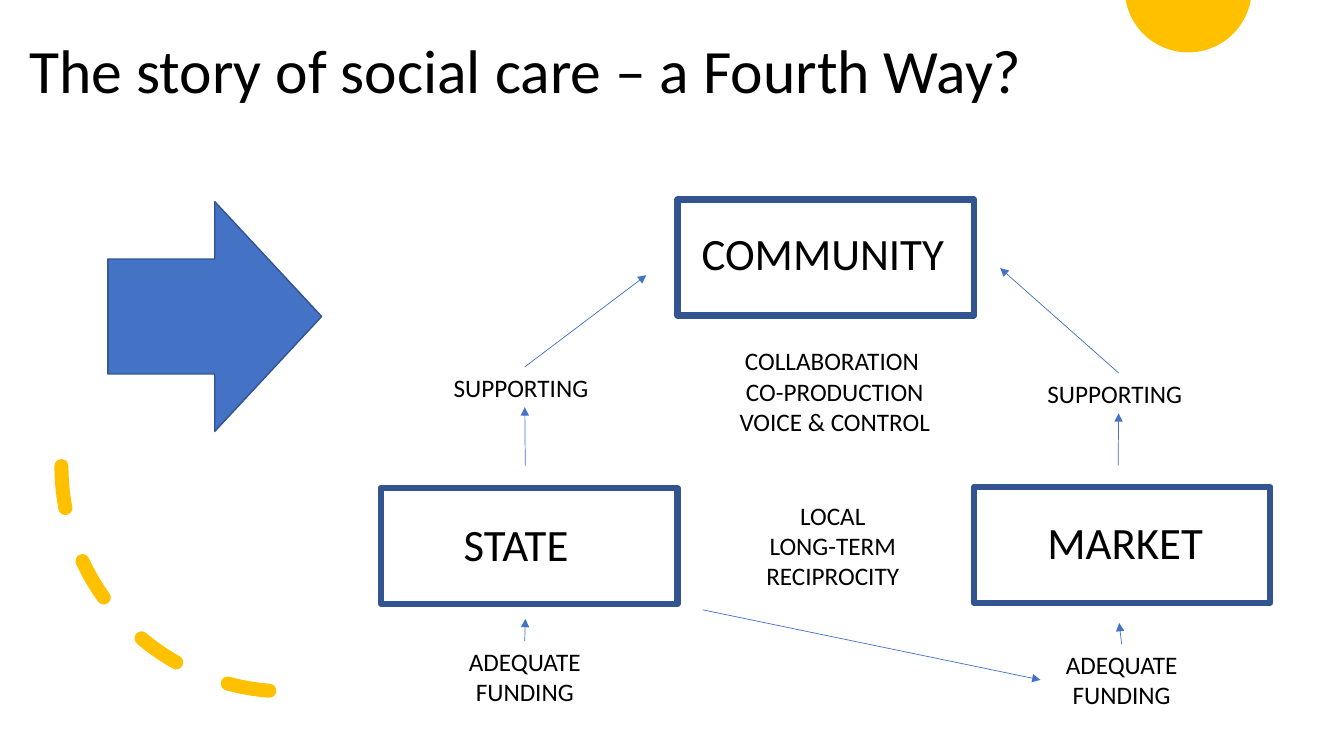
"""Build the social care slide: community, state and market linked by arrows."""
import math

from lxml import etree
from pptx import Presentation
from pptx.dml.color import RGBColor
from pptx.enum.dml import MSO_LINE
from pptx.enum.shapes import MSO_CONNECTOR, MSO_SHAPE
from pptx.enum.text import MSO_ANCHOR, PP_ALIGN
from pptx.oxml.ns import qn
from pptx.util import Inches, Pt

RECTANGLE, RIGHT_ARROW, ARC = MSO_SHAPE.RECTANGLE, MSO_SHAPE.RIGHT_ARROW, MSO_SHAPE.ARC
STRAIGHT = MSO_CONNECTOR.STRAIGHT
DASH = MSO_LINE.DASH
TOP, MIDDLE = MSO_ANCHOR.TOP, MSO_ANCHOR.MIDDLE
LEFT, CENTER = PP_ALIGN.LEFT, PP_ALIGN.CENTER
TOP_SIDE, LEFT_SIDE, BOTTOM_SIDE = 0, 1, 2

FONT = "Calibri"
COLORS = {"text": "000000", "box": "FFFFFF", "outline": "325491",
          "blue": "4472C4", "gold": "FFC000"}

TITLE = "The story of social care – a Fourth Way?"
TITLE_AREA = (0.19, 0, 11.5, 1.45)
BIG_ARROW_AREA = (1.07, 2, 2.12, 2.28)
ARC_AREA = (0.61, 2.39, 4.47, 4.47)
SUN_CENTER, SUN_RADIUS = (11.785, -0.11), 0.63
BOX_SIZE = (2.94, 1.15)
BOXES = [(6.72, 1.98), (3.78, 4.84), (9.66, 4.83)]

LABELS = {
    "community": (["COMMUNITY"], (6.86, 2.19, 2.8, 0.64), 32, LEFT),
    "state": (["STATE"], (4.5, 5.08, 1.29, 0.64), 32, LEFT),
    "market": (["MARKET"], (10.29, 5.06, 1.76, 0.64), 32, LEFT),
    "methods": (["COLLABORATION ", "CO-PRODUCTION", "VOICE & CONTROL"],
                (7.21, 3.38, 2.14, 1.01), 18, CENTER),
    "values": (["LOCAL", "LONG-TERM", "RECIPROCITY"], (7.41, 4.91, 1.7, 1.01), 18, CENTER),
    "state support": (["SUPPORTING"], (4.4, 3.64, 1.61, 0.4), 18, LEFT),
    "market support": (["SUPPORTING"], (10.29, 3.7, 1.61, 0.4), 18, LEFT),
    "state funding": (["ADEQUATE FUNDING"], (4.4, 6.36, 1.61, 0.71), 18, CENTER),
    "market funding": (["ADEQUATE FUNDING"], (10.32, 6.39, 1.61, 0.71), 18, CENTER),
}

ARROWS = [
    ((5.21, 4.62), ("state support", BOTTOM_SIDE)),
    (("state support", TOP_SIDE), (6.41, 2.73)),
    ((11.09, 4.62), ("market support", BOTTOM_SIDE)),
    (("market support", TOP_SIDE), (9.92, 2.66)),
    (("state funding", TOP_SIDE), (5.21, 6.14)),
    ((6.97, 6.05), ("market funding", LEFT_SIDE)),
    (("market funding", TOP_SIDE), (11.1, 6.18)),
]


def color(name):
    return RGBColor.from_string(COLORS[name])


def inches(values):
    return [Inches(value) for value in values]


def write(frame, lines, size, alignment, anchor=TOP):
    frame.word_wrap = True
    frame.vertical_anchor = anchor
    for index, line in enumerate(lines):
        paragraph = frame.paragraphs[0] if index == 0 else frame.add_paragraph()
        paragraph.alignment = alignment
        run = paragraph.add_run()
        run.text = line
        run.font.name = FONT
        run.font.size = Pt(size)
        run.font.color.rgb = color("text")


def add_filled(slide, kind, area, fill, line_width):
    shape = slide.shapes.add_shape(kind, *inches(area))
    shape.shadow.inherit = False
    shape.fill.solid()
    shape.fill.fore_color.rgb = color(fill)
    shape.line.color.rgb = color("outline")
    shape.line.width = Pt(line_width)


def add_title(slide):
    title = slide.shapes.title
    title.left, title.top, title.width, title.height = inches(TITLE_AREA)
    write(title.text_frame, [TITLE], 44, LEFT, MIDDLE)
    title.text_frame.paragraphs[0].line_spacing = 0.9


def add_sun(slide):
    center_x, center_y = SUN_CENTER
    start = math.asin(-center_y / SUN_RADIUS)
    steps = 60
    angles = [start + (math.pi - 2 * start) * step / steps for step in range(steps + 1)]
    points = [(Inches(center_x + SUN_RADIUS * math.cos(angle)),
               Inches(center_y + SUN_RADIUS * math.sin(angle))) for angle in angles]
    builder = slide.shapes.build_freeform(*points[0])
    builder.add_line_segments(points[1:], close=True)
    sun = builder.convert_to_shape()
    sun.shadow.inherit = False
    sun.fill.solid()
    sun.fill.fore_color.rgb = color("gold")
    sun.line.fill.background()


def add_dashed_arc(slide):
    arc = slide.shapes.add_shape(ARC, *inches(ARC_AREA))
    arc.shadow.inherit = False
    arc.fill.background()
    arc.rotation = 90
    arc._element.spPr.find(qn("a:xfrm")).set("flipV", "1")
    arc.line.color.rgb = color("gold")
    arc.line.width = Pt(10)
    arc.line.dash_style = DASH
    arc.line._get_or_add_ln().set("cap", "rnd")


def add_label(slide, lines, area, size, alignment):
    label = slide.shapes.add_textbox(*inches(area))
    write(label.text_frame, lines, size, alignment)
    return label


def add_arrow(slide, start, end, labels):
    arrow = slide.shapes.add_connector(STRAIGHT, 0, 0, 0, 0)
    if start[0] in labels:
        arrow.begin_connect(labels[start[0]], start[1])
    else:
        arrow.begin_x, arrow.begin_y = inches(start)
    if end[0] in labels:
        arrow.end_connect(labels[end[0]], end[1])
    else:
        arrow.end_x, arrow.end_y = inches(end)
    arrow.line.color.rgb = color("blue")
    arrow.line.width = Pt(0.5)
    etree.SubElement(arrow.line._get_or_add_ln(), qn("a:tailEnd"), type="triangle")
    etree.SubElement(arrow._element.spPr, qn("a:effectLst"))


def main():
    presentation = Presentation()
    presentation.slide_width, presentation.slide_height = inches((13.33, 7.5))
    slide = presentation.slides.add_slide(presentation.slide_layouts[5])
    add_sun(slide)
    add_title(slide)
    add_dashed_arc(slide)
    add_filled(slide, RIGHT_ARROW, BIG_ARROW_AREA, "blue", 1)
    for position in BOXES:
        add_filled(slide, RECTANGLE, position + BOX_SIZE, "box", 4.5)
    labels = {name: add_label(slide, *label) for name, label in LABELS.items()}
    for start, end in ARROWS:
        add_arrow(slide, start, end, labels)
    presentation.save("out.pptx")


if __name__ == "__main__":
    main()
